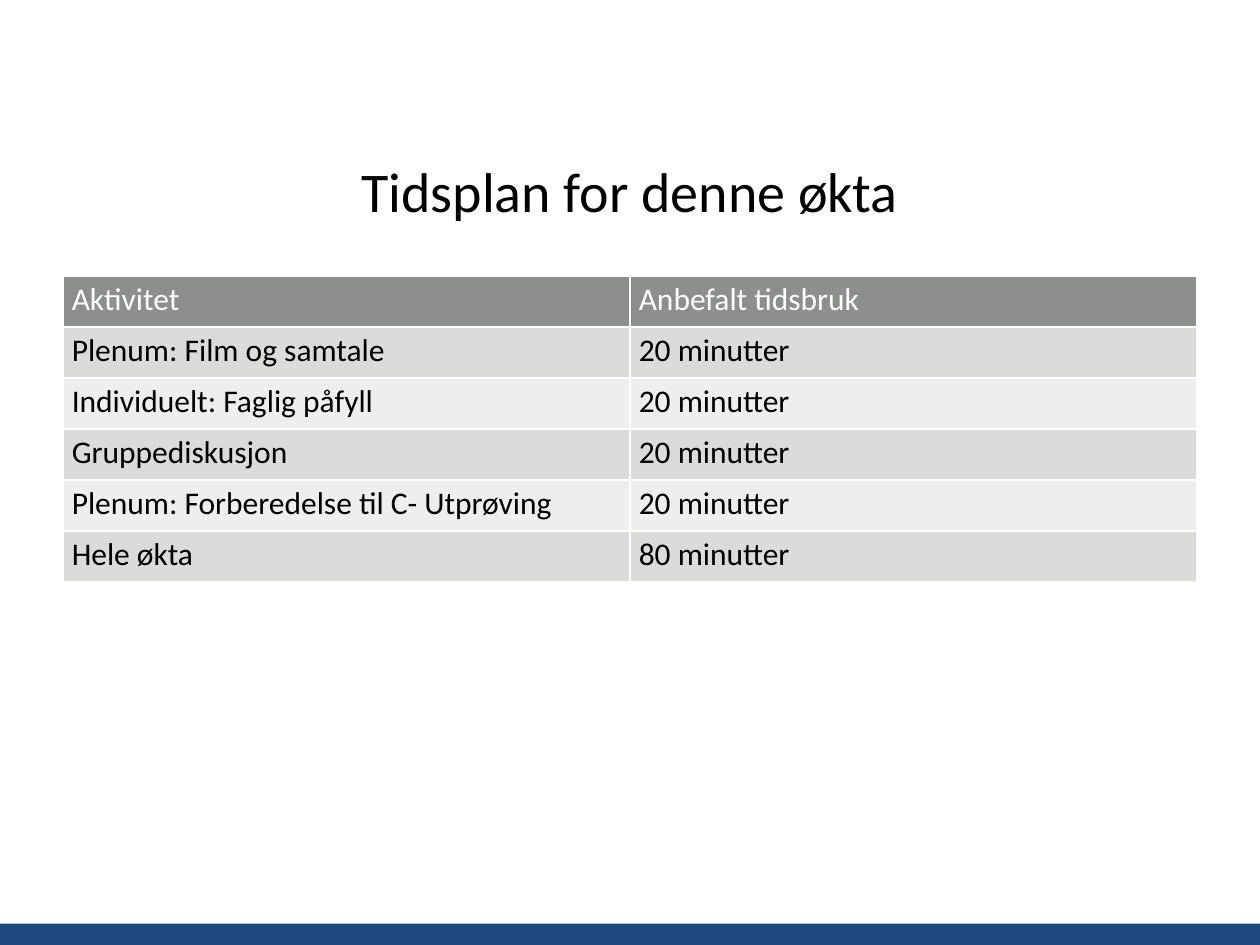
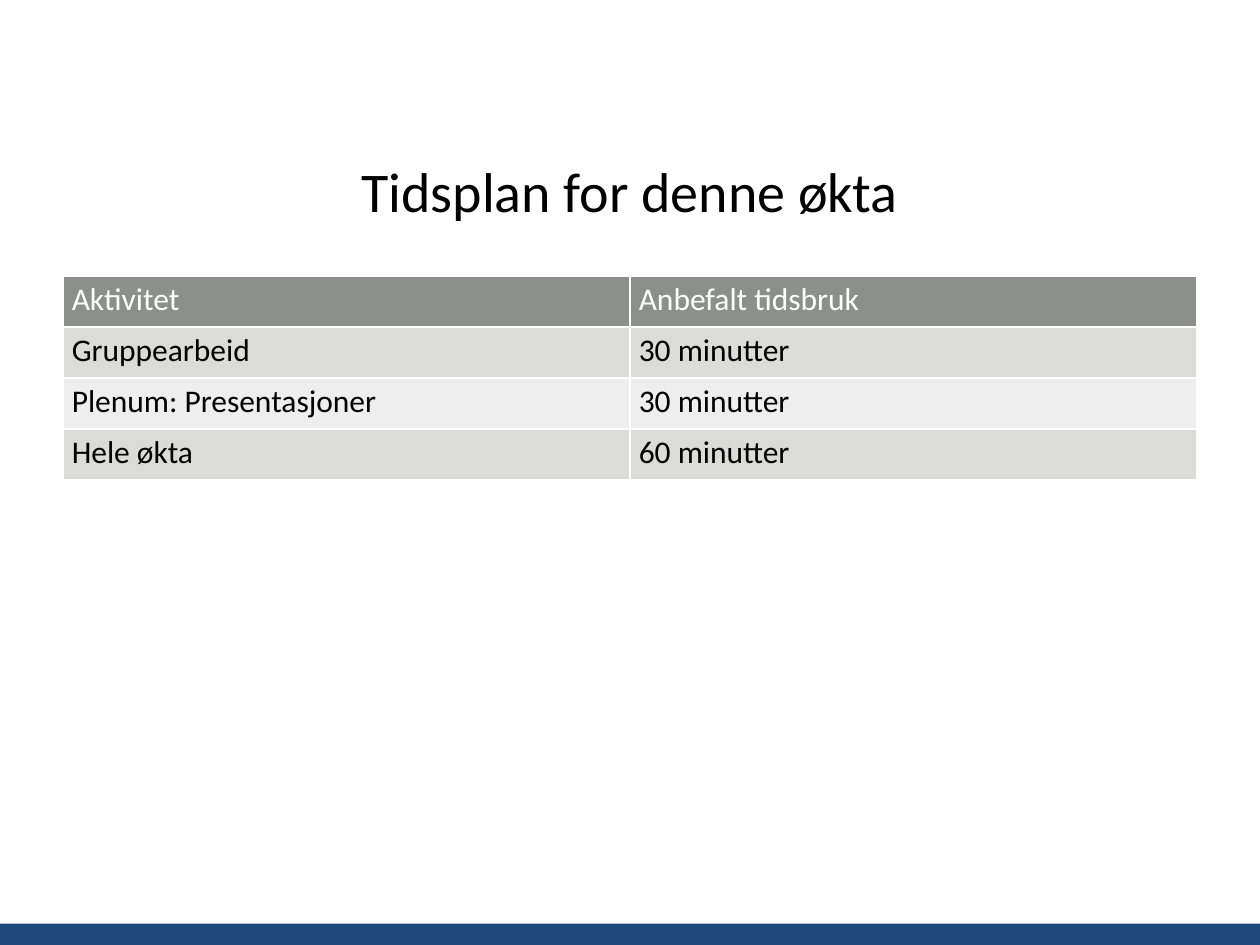
from collections import namedtuple
from dataclasses import dataclass

from lxml.etree import SubElement
from pptx import Presentation
from pptx.dml.color import RGBColor
from pptx.enum.shapes import MSO_SHAPE
from pptx.enum.text import MSO_ANCHOR, PP_ALIGN
from pptx.oxml.ns import qn
from pptx.util import Inches, Pt

Box = namedtuple("Box", "left top width height")


@dataclass(frozen=True)
class Theme:
    """Colours, type sizes and measures shared by the slides."""

    font: str = "Calibri"
    text: str = "000000"
    light: str = "FFFFFF"
    band: str = "1F487E"
    header: str = "8D8F8C"
    stripes: tuple = ("DBDBDA", "EEEEEE")
    title_size: int = 32
    table_size: int = 18
    border: int = 1
    row_height: int = Inches(0.81) // 2


THEME = Theme()
PAGE_WIDTH, PAGE_HEIGHT = Inches(10), Inches(7.5)
MARGIN = Inches(0.5)
CONTENT_WIDTH = PAGE_WIDTH - 2 * MARGIN
BAND_HEIGHT = Inches(0.17)
BAND_BOX = Box(0, PAGE_HEIGHT - BAND_HEIGHT, PAGE_WIDTH, BAND_HEIGHT)
TITLE_BOX = Box(MARGIN, Inches(1), CONTENT_WIDTH, Inches(1.01))
TABLE_TOP = Inches(2.19)

TITLE = "Tidsplan for denne økta"
HEADER = ("Aktivitet", "Anbefalt tidsbruk")
SCHEDULES = (
    (
        ("Plenum: Film og samtale", "20 minutter"),
        ("Individuelt: Faglig påfyll", "20 minutter"),
        ("Gruppediskusjon", "20 minutter"),
        ("Plenum: Forberedelse til C- Utprøving", "20 minutter"),
        ("Hele økta", "80 minutter"),
    ),
    (
        ("Gruppearbeid", "30 minutter"),
        ("Plenum: Presentasjoner", "30 minutter"),
        ("Hele økta", "60 minutter"),
    ),
)


def apply_format(target, values):
    """Set each named attribute of the target."""
    for name, value in values.items():
        setattr(target, name, value)


def paint(shape, color):
    """Give a shape or cell a solid fill."""
    shape.fill.solid()
    shape.fill.fore_color.rgb = RGBColor.from_string(color)


def write(para, text, size, color):
    """Put one formatted span of text in a paragraph."""
    span = para.add_run()
    span.text = text
    apply_format(span.font, {"name": THEME.font, "size": Pt(size), "bold": False})
    span.font.color.rgb = RGBColor.from_string(color)


def add_band(page, box):
    """Draw the coloured band along the foot of the page."""
    band = page.shapes.add_shape(MSO_SHAPE.RECTANGLE, *box)
    band.shadow.inherit = False
    paint(band, THEME.band)
    band.line.fill.background()


def add_title(page, box, text):
    """Place the centred title."""
    frame = page.shapes.add_textbox(*box).text_frame
    apply_format(frame, {"word_wrap": True, "vertical_anchor": MSO_ANCHOR.MIDDLE})
    para = frame.paragraphs[0]
    para.alignment = PP_ALIGN.CENTER
    write(para, text, THEME.title_size, THEME.text)


def add_borders(cell):
    """Draw a thin light border on each side of a cell."""
    properties = cell._tc.get_or_add_tcPr()
    for side in ("lnL", "lnR", "lnT", "lnB"):
        line = SubElement(properties, qn(f"a:{side}"), w=str(Pt(THEME.border)))
        fill = SubElement(line, qn("a:solidFill"))
        SubElement(fill, qn("a:srgbClr"), val=THEME.light)


def fill_cell(cell, text, fill, color):
    """Write and style one table cell."""
    apply_format(cell, {
        "margin_left": Inches(0.07), "margin_right": Inches(0.07),
        "margin_top": Inches(0.04), "margin_bottom": Inches(0.04),
    })
    add_borders(cell)
    paint(cell, fill)
    write(cell.text_frame.paragraphs[0], text, THEME.table_size, color)


def add_schedule(page, box, rows):
    """Build the table of activities with striped rows."""
    table = page.shapes.add_table(len(rows), len(HEADER), *box).table
    for row_index, row in enumerate(rows):
        if row_index:
            fill, color = THEME.stripes[(row_index - 1) % 2], THEME.text
        else:
            fill, color = THEME.header, THEME.light
        for column_index, text in enumerate(row):
            fill_cell(table.cell(row_index, column_index), text, fill, color)


def add_schedule_page(deck, activities):
    """Add one page with a band, a title and a schedule."""
    page = deck.slides.add_slide(deck.slide_layouts[6])
    rows = (HEADER, *activities)
    add_band(page, BAND_BOX)
    add_title(page, TITLE_BOX, TITLE)
    table_box = Box(MARGIN, TABLE_TOP, CONTENT_WIDTH, THEME.row_height * len(rows))
    add_schedule(page, table_box, rows)


def main():
    """Build and save the deck."""
    deck = Presentation()
    apply_format(deck, {"slide_width": PAGE_WIDTH, "slide_height": PAGE_HEIGHT})
    for activities in SCHEDULES:
        add_schedule_page(deck, activities)
    deck.save("out.pptx")


if __name__ == "__main__":
    main()
